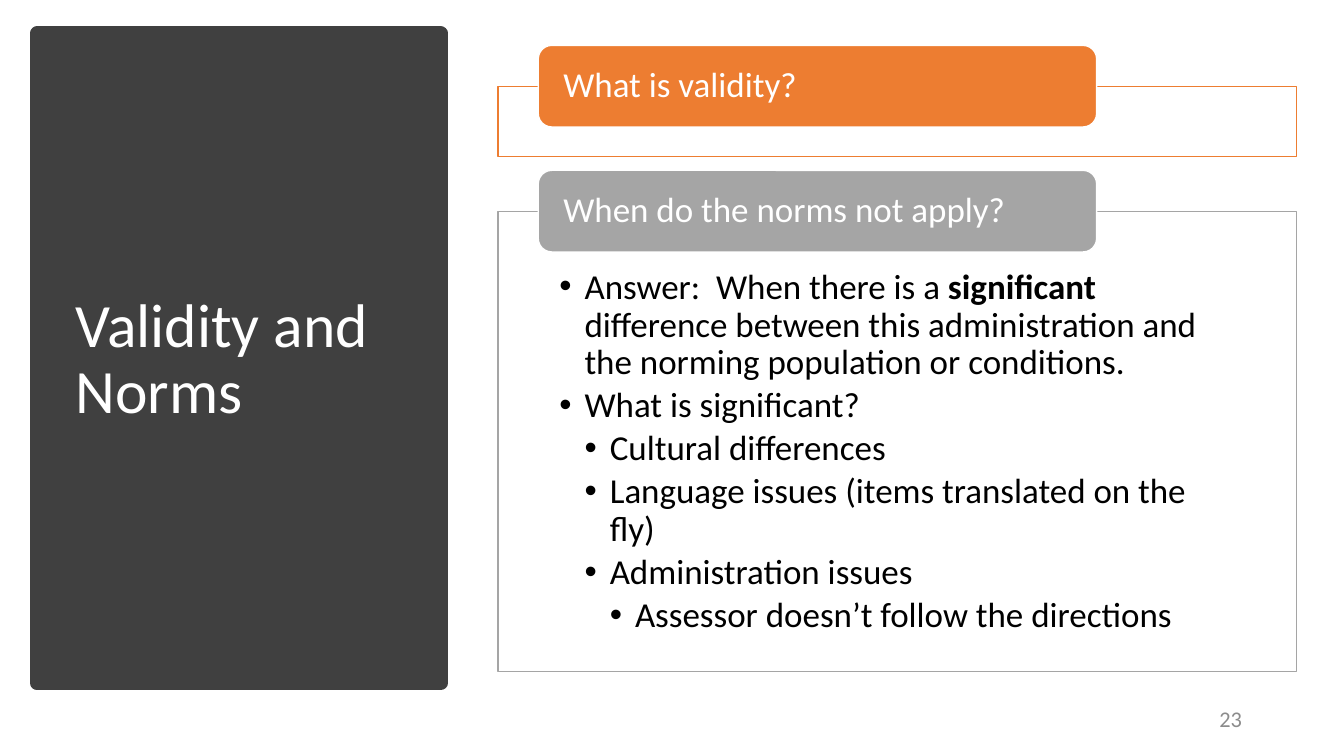
from dataclasses import dataclass

from lxml import etree
from pptx import Presentation
from pptx import util as u
from pptx.dml.color import RGBColor
from pptx.enum import shapes, text
from pptx.oxml.ns import qn
from pptx.shapes.autoshape import Shape
from pptx.slide import Slide
from pptx.text.text import TextFrame, _Paragraph

WIDTH, HEIGHT = u.Inches(13.33), u.Inches(7.5)
FONT = "Calibri"
COLOURS = {
    "panel": "404040",
    "validity": "ED7D31",
    "norms": "A5A5A5",
    "white": "FFFFFF",
    "black": "000000",
    "number": "8C8C8C",
}
BODY_SIZE = 25
INDENT = 0.25
HEADER_RISE = 5.47


@dataclass(frozen=True)
class Area:
    """Percentages of the slide's width and height."""

    left: float
    top: float
    width: float
    height: float

    def lengths(self) -> tuple[int, int, int, int]:
        return (
            int(WIDTH * self.left / 100),
            int(HEIGHT * self.top / 100),
            int(WIDTH * self.width / 100),
            int(HEIGHT * self.height / 100),
        )


@dataclass(frozen=True)
class Bullet:
    level: int
    wording: str
    bold: str = ""


@dataclass(frozen=True)
class Section:
    heading: str
    colour: str
    top: float
    height: float
    bullets: tuple[Bullet, ...] = ()


SECTIONS = (
    Section("What is validity?", "validity", 11.47, 9.2),
    Section(
        "When do the norms not apply?", "norms", 28, 60.8,
        (
            Bullet(
                1,
                "Answer:  When there is a significant difference between this "
                "administration and the norming population or conditions.",
                "significant",
            ),
            Bullet(1, "What is significant?"),
            Bullet(2, "Cultural differences"),
            Bullet(2, "Language issues (items translated on the fly)"),
            Bullet(2, "Administration issues"),
            Bullet(3, "Assessor doesn’t follow the directions"),
        ),
    ),
)


def rgb(name: str) -> RGBColor:
    return RGBColor.from_string(COLOURS[name])


def add_block(slide: Slide, kind: shapes.MSO_SHAPE, area: Area,
              fill: str, line: str, points: float) -> Shape:
    block = slide.shapes.add_shape(kind, *area.lengths())
    block.shadow.inherit = False
    block.fill.solid()
    block.fill.fore_color.rgb = rgb(fill)
    block.line.color.rgb = rgb(line)
    block.line.width = u.Pt(points)
    return block


def set_frame(frame: TextFrame, anchor: text.MSO_ANCHOR,
              side: float = 0.1, top: float = 0.05, bottom: float = 0.05) -> None:
    frame.word_wrap = True
    frame.vertical_anchor = anchor
    frame.margin_left = frame.margin_right = u.Inches(side)
    frame.margin_top, frame.margin_bottom = u.Inches(top), u.Inches(bottom)


def format_paragraph(paragraph: _Paragraph, size: float, colour: str,
                     align: text.PP_ALIGN = text.PP_ALIGN.LEFT) -> None:
    paragraph.alignment = align
    paragraph.line_spacing = 0.9
    for run in paragraph.runs:
        run.font.name = FONT
        run.font.size = u.Pt(size)
        run.font.color.rgb = rgb(colour)


def add_label(slide: Slide, area: Area, wording: str, size: float, colour: str,
              align: text.PP_ALIGN = text.PP_ALIGN.LEFT) -> None:
    frame = slide.shapes.add_textbox(*area.lengths()).text_frame
    set_frame(frame, text.MSO_ANCHOR.MIDDLE)
    frame.text = wording
    format_paragraph(frame.paragraphs[0], size, colour, align)


def write_bullet(paragraph: _Paragraph, bullet: Bullet) -> None:
    if bullet.bold:
        before, after = bullet.wording.split(bullet.bold, 1)
        for part in (before, bullet.bold, after):
            run = paragraph.add_run()
            run.text = part
            run.font.bold = part == bullet.bold
    else:
        paragraph.text = bullet.wording
    paragraph.level = bullet.level
    format_paragraph(paragraph, BODY_SIZE, "black")
    paragraph.space_after = u.Pt(BODY_SIZE * 0.15)
    properties = paragraph._p.get_or_add_pPr()
    properties.set("marL", str(u.Inches(INDENT * bullet.level)))
    properties.set("indent", str(-u.Inches(INDENT)))
    etree.SubElement(properties, qn("a:buFont")).set("typeface", "Arial")
    etree.SubElement(properties, qn("a:buChar")).set("char", "•")


def add_section(slide: Slide, section: Section) -> None:
    detail = add_block(slide, shapes.MSO_SHAPE.RECTANGLE,
                       Area(37.05, section.top, 59.4, section.height),
                       "white", section.colour, 1)
    tint = detail.fill._xPr.find(qn("a:solidFill"))[0]
    etree.SubElement(tint, qn("a:alpha")).set("val", "90000")
    if section.bullets:
        frame = detail.text_frame
        set_frame(frame, text.MSO_ANCHOR.TOP, 0.61, 0.57, 0.19)
        for index, bullet in enumerate(section.bullets):
            write_bullet(frame.add_paragraph() if index else frame.paragraphs[0], bullet)

    heading = add_block(slide, shapes.MSO_SHAPE.ROUNDED_RECTANGLE,
                        Area(40.05, section.top - HEADER_RISE, 41.55, 10.8),
                        section.colour, "white", 1)
    set_frame(heading.text_frame, text.MSO_ANCHOR.MIDDLE, 0.21, 0, 0)
    heading.text_frame.text = section.heading
    format_paragraph(heading.text_frame.paragraphs[0], BODY_SIZE, "white")


def main() -> None:
    deck = Presentation()
    deck.slide_width, deck.slide_height = WIDTH, HEIGHT
    slide = deck.slides.add_slide(deck.slide_layouts[6])
    add_block(slide, shapes.MSO_SHAPE.RECTANGLE, Area(2.78, 4.4, 30, 86),
              "panel", "panel", 10)
    add_label(slide, Area(4.88, 9.33, 25.95, 76.67), "Validity and Norms", 44, "white")
    for section in SECTIONS:
        add_section(slide, section)
    add_label(slide, Area(70.65, 92.67, 22.5, 5.33), "23", 16, "number",
              text.PP_ALIGN.RIGHT)
    deck.save("out.pptx")


if __name__ == "__main__":
    main()
